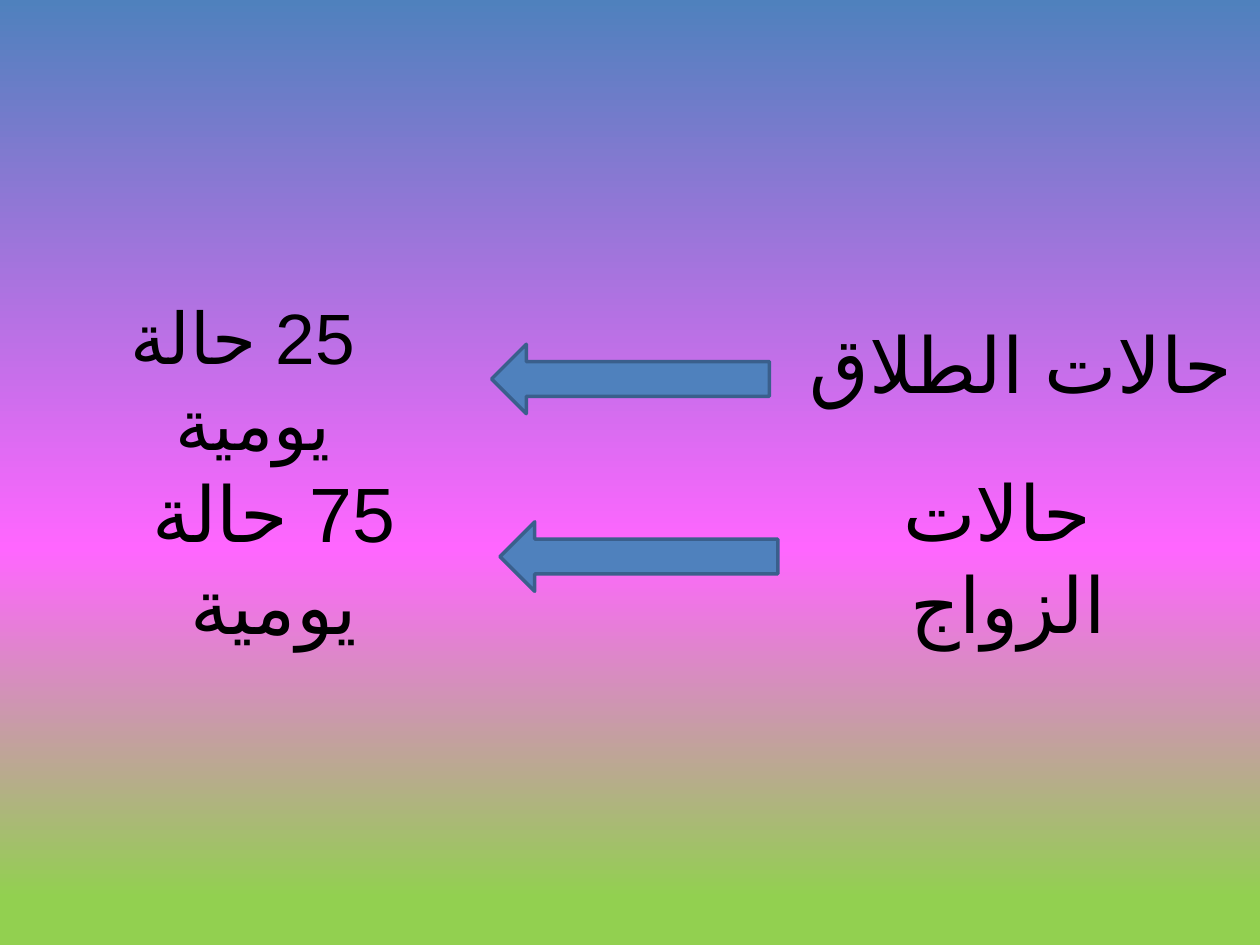
from dataclasses import dataclass

from lxml.etree import SubElement
from pptx import Presentation
from pptx.dml.color import RGBColor
from pptx.enum.lang import MSO_LANGUAGE_ID
from pptx.enum.shapes import MSO_SHAPE
from pptx.enum.text import MSO_ANCHOR, PP_ALIGN
from pptx.oxml.ns import qn
from pptx.util import Cm, Pt


@dataclass(frozen=True)
class Theme:
    font: str = "Calibri"
    script: str = "Arial"
    ink: str = "000000"
    blue: str = "4F81BD"
    edge: str = "3A5F8C"
    stops: tuple = ((0, "4F81BD"), (58, "FF66FF"), (95, "92D050"))
    large: float = 44
    small: float = 40.7
    stroke: float = 2


THEME = Theme()
HEIGHT = 3.18


def paint_back(slide):
    slide.background.fill.gradient()
    grad = slide.element.find(".//" + qn("a:gradFill"))
    stops = grad.find(qn("a:gsLst"))
    for old in list(stops):
        stops.remove(old)
    for place, color in THEME.stops:
        stop = SubElement(stops, qn("a:gs"), pos=str(place * 1000))
        SubElement(stop, qn("a:srgbClr"), val=color)
    grad.find(qn("a:lin")).set("ang", str(90 * 60000))


def add_label(slide, left, top, width, text, size):
    box = slide.shapes.add_textbox(Cm(left), Cm(top), Cm(width), Cm(HEIGHT))
    frame = box.text_frame
    frame.word_wrap = True
    frame.vertical_anchor = MSO_ANCHOR.MIDDLE
    para = frame.paragraphs[0]
    para.text = text
    para.alignment = PP_ALIGN.CENTER
    para._p.get_or_add_pPr().set("rtl", "1")
    para.font.name = THEME.font
    para.font.size = Pt(size)
    para.font.color.rgb = RGBColor.from_string(THEME.ink)
    run = para.runs[0]
    run.font.language_id = MSO_LANGUAGE_ID.ARABIC
    SubElement(run._r.get_or_add_rPr(), qn("a:cs"), typeface=THEME.script)


def add_arrow(slide, left, top):
    arrow = slide.shapes.add_shape(
        MSO_SHAPE.LEFT_ARROW, Cm(left), Cm(top), Cm(5.6), Cm(1.4))
    arrow.shadow.inherit = False
    arrow.fill.solid()
    arrow.fill.fore_color.rgb = RGBColor.from_string(THEME.blue)
    arrow.line.color.rgb = RGBColor.from_string(THEME.edge)
    arrow.line.width = Pt(THEME.stroke)


def add_row(slide, left, top, count, arrow, label):
    for x, y, width, text, size in (count, label):
        add_label(slide, left + x, top + y, width, text, size)
    x, y = arrow
    add_arrow(slide, left + x, top + y)


def main():
    deck = Presentation()
    deck.slide_width, deck.slide_height = Cm(25.4), Cm(19.05)
    slide = deck.slides.add_slide(deck.slide_layouts[6])
    paint_back(slide)
    add_row(slide, 1.2, 5.72,
            count=(0.1, 0.33, 7.19, "25 حالة يومية ", THEME.small),
            arrow=(8.71, 1.22),
            label=(13.71, 0, 10.92, "حالات الطلاق ", THEME.large))
    add_row(slide, 1.2, 9.63,
            count=(0, 0.02, 8.64, "75 حالة يومية", THEME.large),
            arrow=(8.88, 0.89),
            label=(14.7, 0, 8.41, "حالات الزواج ", THEME.large))
    deck.save("out.pptx")


if __name__ == "__main__":
    main()
